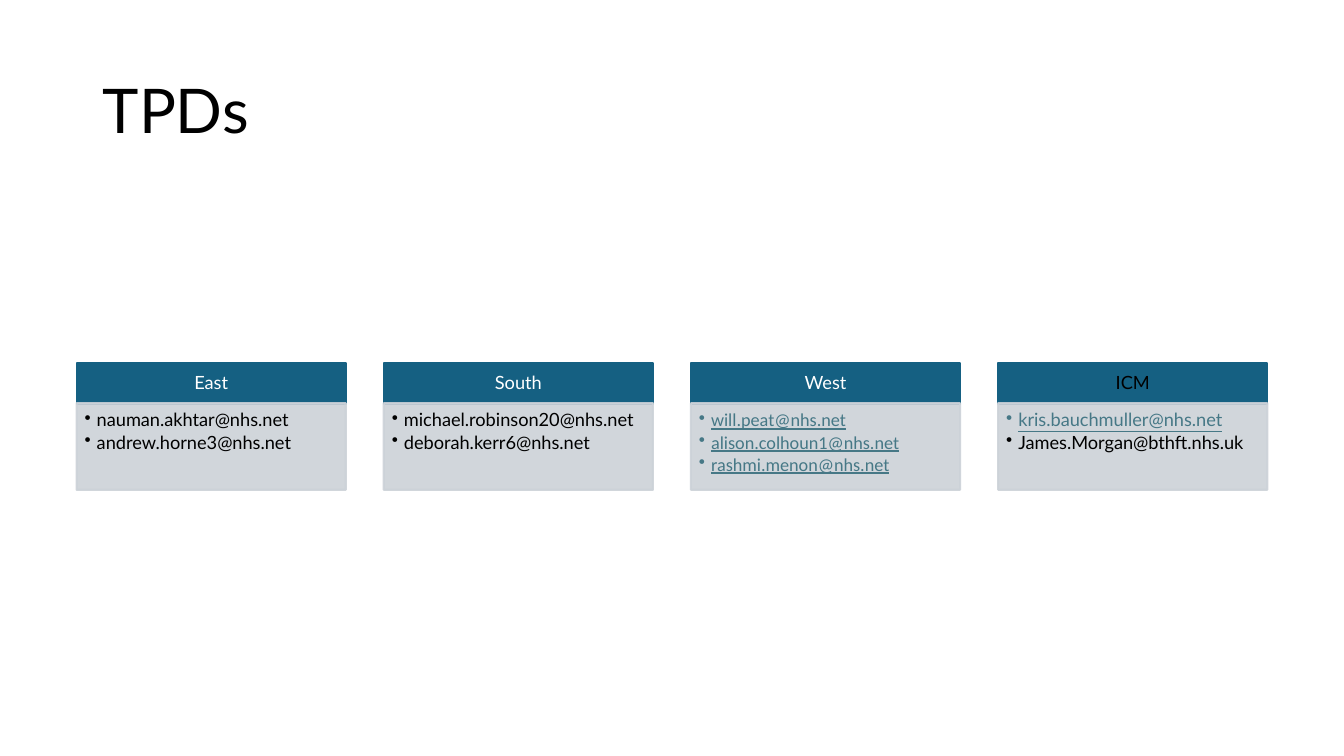
from dataclasses import dataclass

from lxml import etree
from pptx import Presentation
from pptx.dml.color import RGBColor
from pptx.enum.shapes import MSO_SHAPE
from pptx.enum.text import MSO_ANCHOR, PP_ALIGN
from pptx.oxml.ns import qn
from pptx.util import Inches, Pt

RECT = MSO_SHAPE.RECTANGLE
TOP, MIDDLE = MSO_ANCHOR.TOP, MSO_ANCHOR.MIDDLE
LEFT, CENTER = PP_ALIGN.LEFT, PP_ALIGN.CENTER


@dataclass(frozen=True)
class Theme:
    """Colours, fonts and type sizes of the slide."""
    font: str = "Lato"
    link_font: str = "Calibri"
    black: str = "000000"
    white: str = "FFFFFF"
    header: str = "156082"
    panel: str = "CCD2D8"
    link: str = "467886"
    title_size: int = 44
    body_size: int = 13
    panel_opacity: int = 90


T = Theme()
PLAIN = (T.font, T.black, False)
LINK = (T.font, T.link, True)
ALT_LINK = (T.link_font, T.link, True)

REGIONS = [
    ("East", T.white, [("nauman.akhtar@nhs.net", PLAIN),
                       ("andrew.horne3@nhs.net", PLAIN)]),
    ("South", T.white, [("michael.robinson20@nhs.net", PLAIN),
                        ("deborah.kerr6@nhs.net", PLAIN)]),
    ("West", T.white, [("will.peat@nhs.net", ALT_LINK),
                       ("alison.colhoun1@nhs.net", ALT_LINK),
                       ("rashmi.menon@nhs.net", ALT_LINK)]),
    ("ICM", T.black, [("kris.bauchmuller@nhs.net", LINK),
                      ("James.Morgan@bthft.nhs.uk", PLAIN)]),
]


def set_frame(tf, anchor, insets):
    """Set wrapping, anchor and the left, top, right and bottom insets."""
    tf.word_wrap = True
    tf.vertical_anchor = anchor
    tf.margin_left, tf.margin_top, tf.margin_right, tf.margin_bottom = map(Inches, insets)


def add_run(p, text, size, font, color, underline=False):
    """Add one formatted run to a paragraph."""
    r = p.add_run()
    r.text = text
    r.font.size = Pt(size)
    r.font.name = font
    r.font.color.rgb = RGBColor.from_string(color)
    if underline:
        r.font.underline = True


def add_bullet(p):
    """Give a paragraph a hanging round bullet."""
    pPr = p._p.get_or_add_pPr()
    pPr.set("marL", str(Inches(0.12)))
    pPr.set("indent", str(Inches(-0.12)))
    etree.SubElement(pPr, qn("a:buChar")).set("char", "•")


def add_box(s, x, y, w, h, color, opacity=100):
    """Add a rectangle whose fill and outline share one colour."""
    sp = s.shapes.add_shape(RECT, Inches(x), Inches(y), Inches(w), Inches(h))
    sp.shadow.inherit = False
    sp.fill.solid()
    sp.line.width = Pt(1.5)
    for fill in (sp.fill, sp.line.fill):
        fill.solid()
        fill.fore_color.rgb = RGBColor.from_string(color)
    if opacity < 100:
        for clr in sp._element.spPr.iter(qn("a:srgbClr")):
            etree.SubElement(clr, qn("a:alpha")).set("val", str(opacity * 1000))
    return sp


def add_title(s, text):
    """Add the slide title."""
    sp = s.shapes.add_textbox(Inches(0.92), Inches(0.4), Inches(11.5), Inches(1.45))
    set_frame(sp.text_frame, MIDDLE, (0.1, 0.05, 0.1, 0.05))
    p = sp.text_frame.paragraphs[0]
    p.line_spacing = 0.9
    add_run(p, text, T.title_size, T.font, T.black)


def add_header(s, x, w, text, color):
    """Add the coloured heading of a region."""
    sp = add_box(s, x, 3.6, w, 0.41, T.header)
    set_frame(sp.text_frame, MIDDLE, (0.1, 0.06, 0.1, 0.06))
    p = sp.text_frame.paragraphs[0]
    p.alignment = CENTER
    p.line_spacing = 0.9
    add_run(p, text, T.body_size, T.font, color)


def add_contacts(s, x, w, contacts):
    """Add the panel with the bulleted addresses of a region."""
    sp = add_box(s, x, 4, w, 0.86, T.panel, T.panel_opacity)
    tf = sp.text_frame
    set_frame(tf, TOP, (0.08, 0.08, 0.1, 0.11))
    for i, (address, style) in enumerate(contacts):
        p = tf.add_paragraph() if i else tf.paragraphs[0]
        add_bullet(p)
        p.alignment = LEFT
        p.line_spacing = 0.9
        p.space_after = Pt(1.7)
        add_run(p, address, T.body_size, *style)


def main():
    """Build the slide and save it."""
    prs = Presentation()
    prs.slide_width, prs.slide_height = Inches(13.33), Inches(7.5)
    s = prs.slides.add_slide(prs.slide_layouts[6])
    add_title(s, "TPDs")
    left, right, width = 0.76, 12.57, 2.67
    pitch = (right - left - width) / (len(REGIONS) - 1)
    for i, (name, color, contacts) in enumerate(REGIONS):
        x = left + i * pitch
        add_header(s, x, width, name, color)
        add_contacts(s, x, width, contacts)
    prs.save("out.pptx")


if __name__ == "__main__":
    main()
